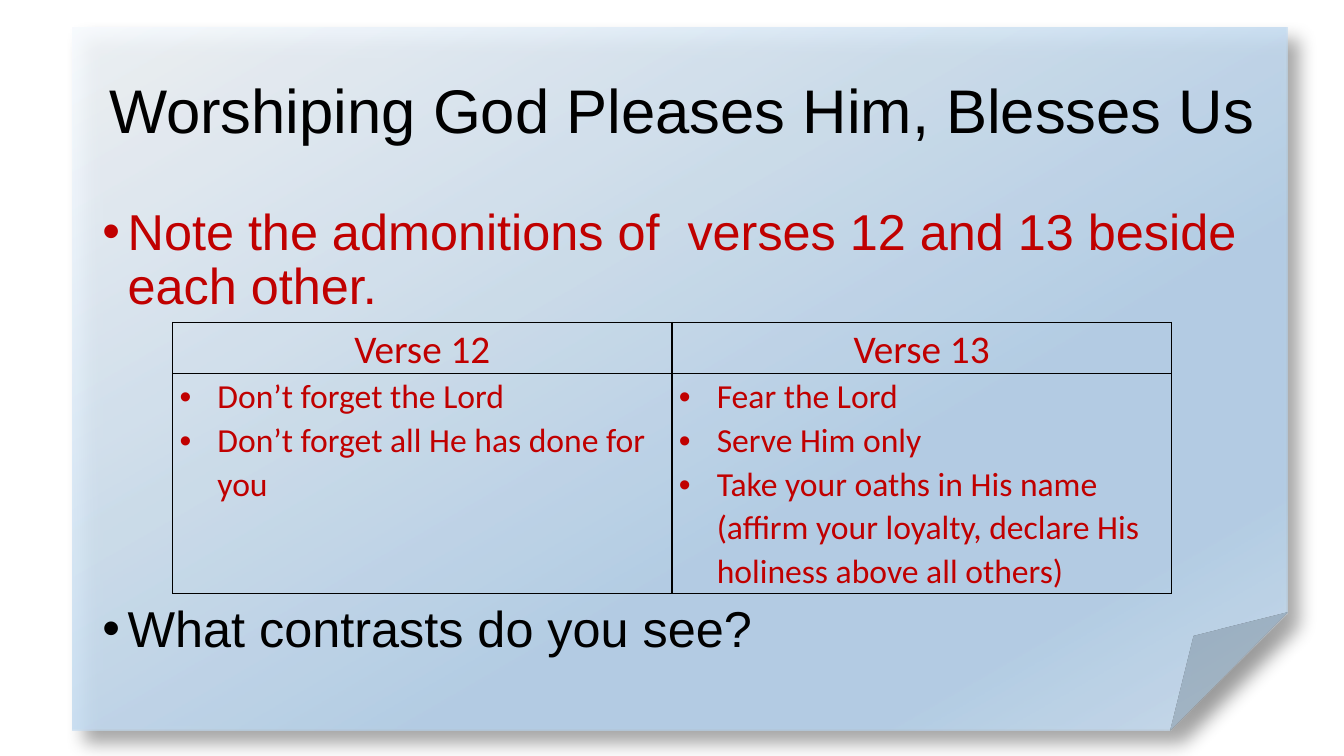
from dataclasses import dataclass

from pptx import Presentation
from pptx.dml.color import RGBColor
from pptx.enum import shapes, text
from pptx.oxml import parse_xml
from pptx.oxml.ns import nsdecls, qn
from pptx.util import Pt


@dataclass(frozen=True)
class Theme:
    heading_font: str = "Arial"
    table_font: str = "Calibri"
    ink: str = "000000"
    accent: str = "C00000"
    paper: tuple = ((0, "F7FAFD"), (64, "B5D2EC"), (83, "B5D2EC"), (100, "CEE1F2"))
    paper_alpha: int = 87
    paper_angle: int = 60
    shadow_alpha: int = 40
    shadow_size: int = 13
    shadow_angle: int = 45
    title_size: int = 44
    body_size: int = 36
    header_size: int = 28
    cell_size: int = 24


def drawing(tag, attrs="", inner=""):
    """Return one DrawingML element."""
    return parse_xml(f'<a:{tag} {nsdecls("a")} {attrs}>{inner}</a:{tag}>')


def color_xml(color, alpha):
    return f'<a:srgbClr val="{color}"><a:alpha val="{alpha * 1000}"/></a:srgbClr>'


class SlideBuilder:
    def __init__(self, prs, theme):
        self.theme = theme
        self.slide = prs.slides.add_slide(prs.slide_layouts[1])

    def place(self, sp, left, top, width, height):
        sp.left, sp.top, sp.width, sp.height = map(Pt, (left, top, width, height))

    def style_text(self, p, wording, font, size, color, spacing,
                   align=text.PP_ALIGN.LEFT):
        p.text = wording
        p.alignment = align
        p.line_spacing = spacing
        p.space_before = p.space_after = Pt(0)
        for r in p.runs:
            r.font.name = font
            r.font.size = Pt(size)
            r.font.color.rgb = RGBColor.from_string(color)

    def bullet(self, p, indent, tab=None):
        pPr = p._p.get_or_add_pPr()
        pPr.set("marL", str(Pt(indent)))
        pPr.set("indent", str(-Pt(indent)))
        pPr.append(drawing("buFont", 'typeface="Arial"'))
        pPr.append(drawing("buChar", 'char="•"'))
        if tab:
            pPr.append(drawing("tabLst", "", f'<a:tab pos="{Pt(tab)}" algn="l"/>'))

    def paper(self, *box):
        """Lay the folded sheet behind everything else."""
        t = self.theme
        sp = self.slide.shapes.add_shape(
            shapes.MSO_SHAPE.FOLDED_CORNER, *map(Pt, box))
        sp.line.fill.background()
        sp.shadow.inherit = False
        sp.fill.solid()
        stops = "".join(
            f'<a:gs pos="{pos * 1000}">{color_xml(color, t.paper_alpha)}</a:gs>'
            for pos, color in t.paper)
        spPr = sp.element.spPr
        spPr.replace(spPr.find(qn("a:solidFill")), drawing(
            "gradFill", 'rotWithShape="1"',
            f'<a:gsLst>{stops}</a:gsLst>'
            f'<a:lin ang="{t.paper_angle * 60000}" scaled="0"/>'))
        spPr.find(qn("a:effectLst")).append(drawing(
            "outerShdw",
            f'blurRad="{Pt(t.shadow_size)}" dist="{Pt(t.shadow_size)}" '
            f'dir="{t.shadow_angle * 60000}" algn="tl" rotWithShape="0"',
            color_xml(t.ink, t.shadow_alpha)))
        self.slide.shapes.element.insert(2, sp.element)

    def title(self, wording, *box):
        t = self.theme
        sp = self.slide.shapes.title
        self.place(sp, *box)
        tf = sp.text_frame
        tf.auto_size = text.MSO_AUTO_SIZE.NONE
        tf.vertical_anchor = text.MSO_ANCHOR.MIDDLE
        self.style_text(tf.paragraphs[0], wording, t.heading_font, t.title_size,
                        t.ink, 0.9, text.PP_ALIGN.CENTER)

    def body(self, points, gap, *box):
        """Fill the body with (wording, color) points set gap apart."""
        t = self.theme
        sp = self.slide.placeholders[1]
        self.place(sp, *box)
        tf = sp.text_frame
        tf.auto_size = text.MSO_AUTO_SIZE.NONE
        for i, (wording, color) in enumerate(points):
            p = tf.add_paragraph() if i else tf.paragraphs[0]
            self.bullet(p, 18)
            self.style_text(p, wording, t.heading_font, t.body_size, color, 0.9)
            if i:
                p.space_before = Pt(gap)

    def border(self, cell):
        tcPr = cell._tc.get_or_add_tcPr()
        for i, side in enumerate(("lnL", "lnR", "lnT", "lnB")):
            tcPr.insert(i, drawing(
                side, f'w="{Pt(1)}"',
                f'<a:solidFill><a:srgbClr val="{self.theme.ink}"/></a:solidFill>'))

    def cell(self, cell, lines, is_header):
        t = self.theme
        cell.fill.background()
        cell.margin_left = cell.margin_right = Pt(5)
        cell.margin_top = cell.margin_bottom = Pt(0)
        self.border(cell)
        tf = cell.text_frame
        for i, line in enumerate(lines):
            p = tf.add_paragraph() if i else tf.paragraphs[0]
            if is_header:
                self.style_text(p, line, t.table_font, t.header_size, t.accent,
                                1.07, text.PP_ALIGN.CENTER)
            else:
                self.bullet(p, 27, tab=18)
                self.style_text(p, line, t.table_font, t.cell_size, t.accent, 1.07)

    def table(self, columns, left, top, width, row_heights):
        """Draw a table of {heading: bullet lines}, one column each."""
        frame = self.slide.shapes.add_table(
            2, len(columns), Pt(left), Pt(top), Pt(width), Pt(sum(row_heights)))
        table = frame.table
        table.first_row = table.horz_banding = False
        for row, height in zip(table.rows, row_heights):
            row.height = Pt(height)
        for c, (heading, lines) in enumerate(columns.items()):
            self.cell(table.cell(0, c), [heading], True)
            self.cell(table.cell(1, c), lines, False)


def main():
    prs = Presentation()
    prs.slide_width, prs.slide_height = Pt(960), Pt(540)
    theme = Theme()
    s = SlideBuilder(prs, theme)
    s.paper(51.5, 19.5, 868, 502)
    s.title("Worshiping God Pleases Him, Blesses Us", 66, 28.8, 843, 104.4)
    s.body([("Note the admonitions of  verses 12 and 13 beside each other.", theme.accent),
            ("What contrasts do you see?", theme.ink)],
           206, 66, 144, 828, 342.7)
    s.table({
        "Verse 12": ["Don’t forget the Lord",
                     "Don’t forget all He has done for you"],
        "Verse 13": ["Fear the Lord",
                     "Serve Him only",
                     "Take your oaths in His name (affirm your loyalty, "
                     "declare His holiness above all others)"],
    }, 123.3, 230.3, 713.4, (36.5, 156.8))
    prs.save("out.pptx")


if __name__ == "__main__":
    main()
